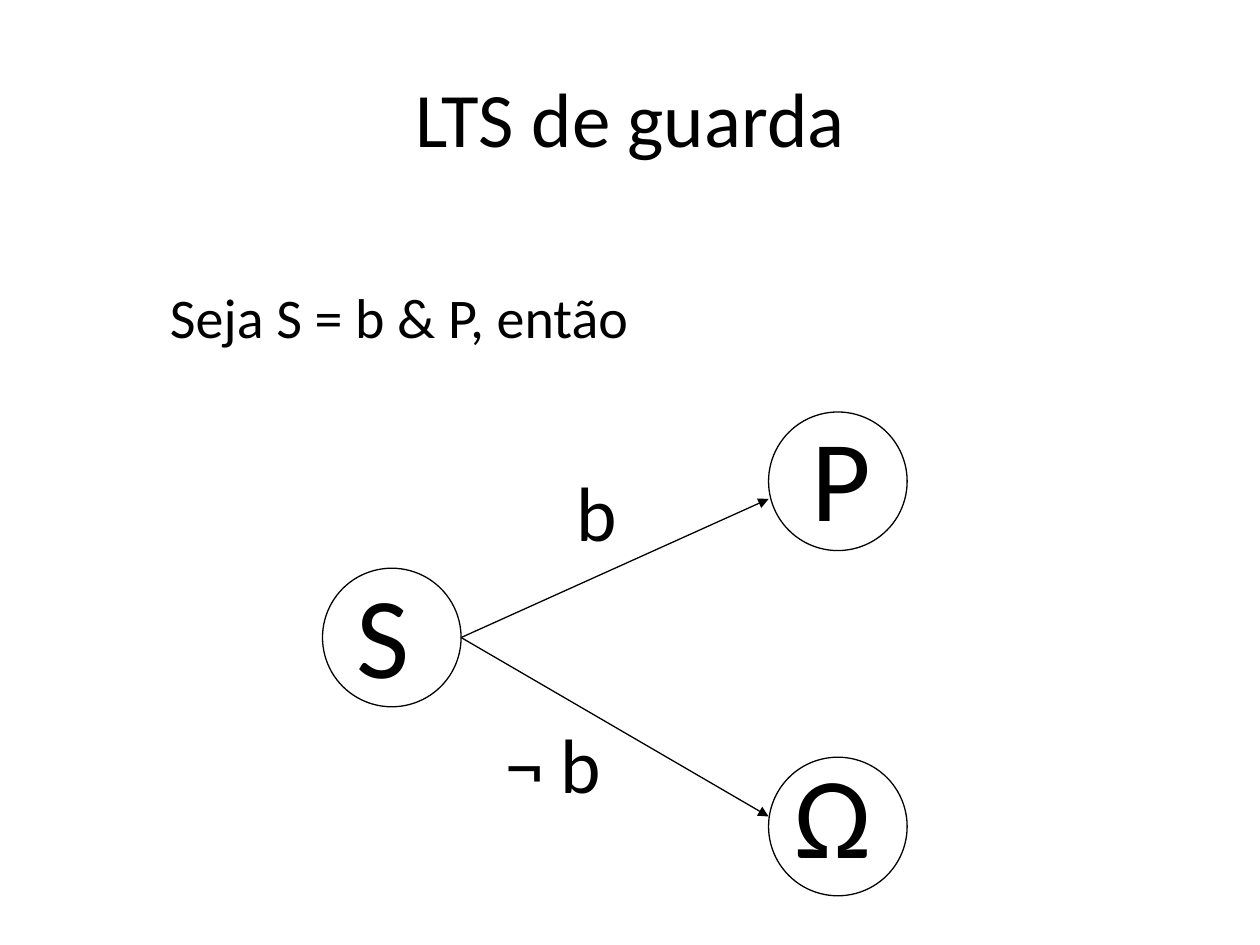
from lxml import etree
from pptx import Presentation
from pptx.dml.color import RGBColor
from pptx.enum.shapes import MSO_CONNECTOR, MSO_SHAPE
from pptx.enum.text import MSO_ANCHOR, MSO_AUTO_SIZE, PP_ALIGN
from pptx.oxml.ns import qn
from pptx.util import Inches, Pt

INK = "000000"
NODE_SIZE = 1.1


def set_color(color_format, value):
    color_format.rgb = RGBColor.from_string(value)


def set_font(p, size):
    p.font.name = "Calibri"
    p.font.size = Pt(size)
    set_color(p.font.color, INK)


def set_line(line):
    line.fill.solid()
    set_color(line.fill.fore_color, INK)
    line.width = Pt(0.75)


def add_text(s, text, x, y, w, h, size):
    tf = s.shapes.add_textbox(Inches(x), Inches(y), Inches(w), Inches(h)).text_frame
    tf.word_wrap = False
    tf.auto_size = MSO_AUTO_SIZE.SHAPE_TO_FIT_TEXT
    tf.text = text
    set_font(tf.paragraphs[0], size)


def add_node(s, x, y, text, dx, dy, w):
    sp = s.shapes.add_shape(MSO_SHAPE.OVAL, Inches(x), Inches(y),
                            Inches(NODE_SIZE), Inches(NODE_SIZE))
    sp.shadow.inherit = False
    sp.fill.background()
    set_line(sp.line)
    add_text(s, text, x + dx, y + dy, w, 1.21, 66)


def add_arrow(s, x1, y1, x2, y2):
    cxn = s.shapes.add_connector(MSO_CONNECTOR.STRAIGHT, Inches(x1), Inches(y1),
                                 Inches(x2), Inches(y2))
    set_line(cxn.line)
    etree.SubElement(cxn.line._get_or_add_ln(), qn("a:tailEnd"), type="triangle")
    etree.SubElement(cxn._element.spPr, qn("a:effectLst"))


def add_title(s, x, y, w, h):
    sp = s.shapes.title
    sp.left, sp.top, sp.width, sp.height = map(Inches, (x, y, w, h))
    tf = sp.text_frame
    tf.text = "LTS de guarda"
    tf.vertical_anchor = MSO_ANCHOR.MIDDLE
    p = tf.paragraphs[0]
    p.alignment = PP_ALIGN.CENTER
    set_font(p, 44)


def add_transitions(s, x, y, w, h):
    target_x = x + w - NODE_SIZE
    source_y = y + 1.24
    add_node(s, target_x, y, "P", 0.24, -0.1, 0.71)
    add_node(s, x, source_y, "S", 0.17, -0.09, 0.72)
    add_node(s, target_x, y + h - NODE_SIZE, "Ω", 0.11, -0.16, 0.91)

    start_x, start_y = x + NODE_SIZE, source_y + NODE_SIZE / 2
    for label, dx, dy, lw, end_dy in (("b", 1.92, 0.37, 0.54, 0.69),
                                      ("¬ b", 1.35, 2.37, 1.18, 3.21)):
        add_arrow(s, start_x, start_y, target_x, y + end_dy)
        add_text(s, label, x + dx, y + dy, lw, 0.84, 44)


def main():
    prs = Presentation()
    prs.slide_width, prs.slide_height = Inches(10), Inches(7.5)
    s = prs.slides.add_slide(prs.slide_layouts[5])
    add_title(s, 0.5, 0.3, 9, 1.25)
    add_text(s, "Seja S = b & P, então", 1.25, 2.19, 4.46, 0.64, 32)
    add_transitions(s, 2.56, 3.27, 4.64, 3.84)
    prs.save("out.pptx")


if __name__ == "__main__":
    main()
